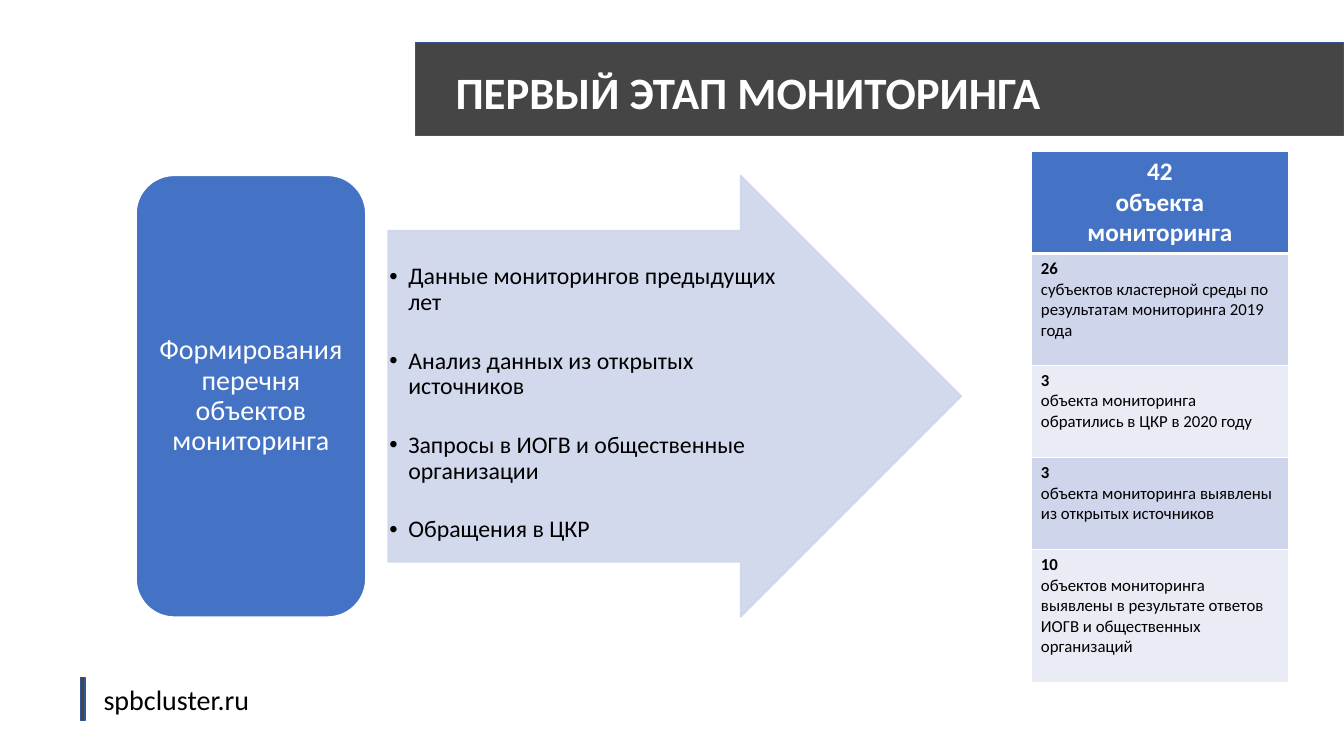
from lxml.etree import SubElement
from pptx import Presentation
from pptx.dml.color import RGBColor
from pptx.enum.shapes import MSO_SHAPE
from pptx.enum.text import MSO_ANCHOR, MSO_AUTO_SIZE, PP_ALIGN
from pptx.oxml import parse_xml
from pptx.oxml.ns import nsdecls, qn
from pptx.util import Cm, Pt

HEX = {"dark": "454545", "edge": "325491", "blue": "4472C4", "pale": "CFD5EA",
       "light": "E9EBF5", "white": "FFFFFF", "black": "000000"}
STEPS = ["Данные мониторингов предыдущих лет", "Анализ данных из открытых источников",
         "Запросы в ИОГВ и общественные организации", "Обращения в ЦКР"]
ROWS = [("42", "объекта мониторинга", 2.58),
        ("26", "субъектов кластерной среды по результатам мониторинга 2019 года", 2.82),
        ("3", "объекта мониторинга обратились в ЦКР в 2020 году", 2.32),
        ("3", "объекта мониторинга выявлены из открытых источников", 2.32),
        ("10", "объектов мониторинга выявлены в результате ответов ИОГВ и общественных организаций", 3.35)]


class Deck:
    """Holds the style and the current slide."""

    def __init__(self, face):
        self.face = face
        self.prs = Presentation()
        self.prs.slide_width, self.prs.slide_height = Cm(33.87), Cm(19.05)
        self.slide = self.prs.slides.add_slide(self.prs.slide_layouts[1])

    def color(self, name):
        """Return a colour by its name."""
        return RGBColor.from_string(HEX[name])

    def style(self, para, size, tint, bold=False, align=PP_ALIGN.LEFT, lead=1.0, gap=0):
        """Format a paragraph and its runs."""
        para.alignment, para.line_spacing = align, lead
        para.space_before, para.space_after = Pt(gap), Pt(0)
        for run in para.runs:
            font = run.font
            font.name, font.size, font.bold = self.face, Pt(size), bold
            font.color.rgb = self.color(tint)

    def frame(self, shape, pads, anchor):
        """Set up the text frame of a shape."""
        frame = shape.text_frame
        frame.word_wrap, frame.auto_size = True, MSO_AUTO_SIZE.NONE
        frame.vertical_anchor = anchor
        frame.margin_left, frame.margin_top, frame.margin_right, frame.margin_bottom = map(Cm, pads)
        return frame

    def shape(self, kind, box, fill, line, alpha=None):
        """Draw a preset shape."""
        shape = self.slide.shapes.add_shape(kind, *map(Cm, box))
        shape.shadow.inherit = False
        shape.fill.solid()
        shape.fill.fore_color.rgb = self.color(fill)
        shape.line.color.rgb = self.color(line)
        shape.line.width = Pt(1)
        if alpha:
            for tone in shape.element.spPr.iter(qn("a:srgbClr")):
                SubElement(tone, qn("a:alpha")).set("val", str(alpha * 1000))
        return shape

    def card(self, box, text):
        """Draw a rounded card with centred text."""
        shape = self.shape(MSO_SHAPE.ROUNDED_RECTANGLE, box, "blue", "white")
        frame = self.frame(shape, (0.15, 0.1, 0.15, 0.1), MSO_ANCHOR.MIDDLE)
        frame.text = text
        self.style(frame.paragraphs[0], 20, "white", align=PP_ALIGN.CENTER, lead=0.9)

    def label(self, box, text):
        """Place a text box."""
        shape = self.slide.shapes.add_textbox(*map(Cm, box))
        frame = self.frame(shape, (0.25, 0.13, 0.25, 0.13), MSO_ANCHOR.TOP)
        frame.text = text
        self.style(frame.paragraphs[0], 20, "black")

    def place(self, holder, box):
        """Move a placeholder and bring it to the front."""
        holder.left, holder.top, holder.width, holder.height = map(Cm, box)
        self.slide.shapes.element.append(holder.element)

    def title(self, box, text):
        """Fill the title placeholder."""
        holder = self.slide.shapes.title
        self.place(holder, box)
        frame = self.frame(holder, (0.25, 0.13, 0.25, 0.13), MSO_ANCHOR.MIDDLE)
        frame.text = text
        self.style(frame.paragraphs[0], 32, "white", bold=True, lead=0.9)

    def items(self, box, texts):
        """Fill the body placeholder with a bulleted list."""
        holder = self.slide.placeholders[1]
        self.place(holder, box)
        frame = self.frame(holder, (0.03, 0.84, 0.03, 0.03), MSO_ANCHOR.TOP)
        for num, text in enumerate(texts):
            para = frame.add_paragraph() if num else frame.paragraphs[0]
            para.text = text
            props = para._p.get_or_add_pPr()
            props.set("marL", str(Cm(0.48)))
            props.set("indent", str(-Cm(0.48)))
            SubElement(props, qn("a:buChar")).set("char", "•")
            self.style(para, 17, "black", lead=0.9, gap=23.5 if num else 0)

    def border(self, cell, head):
        """Draw white borders around a cell."""
        props = cell._tc.get_or_add_tcPr()
        for spot, side in enumerate("LRTB"):
            width = Pt(3 if head and side == "B" else 1)
            props.insert(spot, parse_xml(
                f'<a:ln{side} {nsdecls("a")} w="{width}"><a:solidFill>'
                f'<a:srgbClr val="{HEX["white"]}"/></a:solidFill></a:ln{side}>'))

    def table(self, left, top, width, rows):
        """Build a one-column table of counts and notes."""
        high = sum(row[2] for row in rows)
        table = self.slide.shapes.add_table(
            len(rows), 1, *map(Cm, (left, top, width, high))).table
        table.first_row = table.horz_banding = False
        for num, (count, note, tall) in enumerate(rows):
            head = num == 0
            table.rows[num].height = Cm(tall)
            cell = table.cell(num, 0)
            cell.fill.solid()
            cell.fill.fore_color.rgb = self.color(
                "blue" if head else "pale" if num % 2 else "light")
            self.border(cell, head)
            cell.text_frame.text = f"{count}\n{note}"
            for spot, para in enumerate(cell.text_frame.paragraphs):
                self.style(para, 18 if head else 12, "white" if head else "black",
                           bold=head or spot == 0,
                           align=PP_ALIGN.CENTER if head else PP_ALIGN.LEFT)


def main():
    """Build the slide and save it."""
    deck = Deck("Calibri")
    deck.shape(MSO_SHAPE.RECTANGLE, (10.47, 1.07, 23.4, 2.34), "dark", "edge")
    deck.shape(MSO_SHAPE.RECTANGLE, (2.03, 17.07, 0.11, 1.09), "dark", "edge")
    deck.label((2.36, 17.07, 5.44, 1.12), "spbcluster.ru")
    deck.title((11.23, 1.6, 24.59, 1.6), "ПЕРВЫЙ ЭТАП МОНИТОРИНГА")
    arrow = deck.shape(MSO_SHAPE.RIGHT_ARROW, (9.78, 4.42, 14.45, 11.13), "pale", "pale", 90)
    arrow.adjustments[0], arrow.adjustments[1] = 0.75, 0.5
    deck.items((9.78, 5.82, 10.29, 8.36), STEPS)
    deck.card((3.43, 4.42, 5.79, 11.13), "Формирования перечня объектов мониторинга")
    deck.table(25.98, 3.81, 6.5, ROWS)
    deck.prs.save("out.pptx")


if __name__ == "__main__":
    main()
